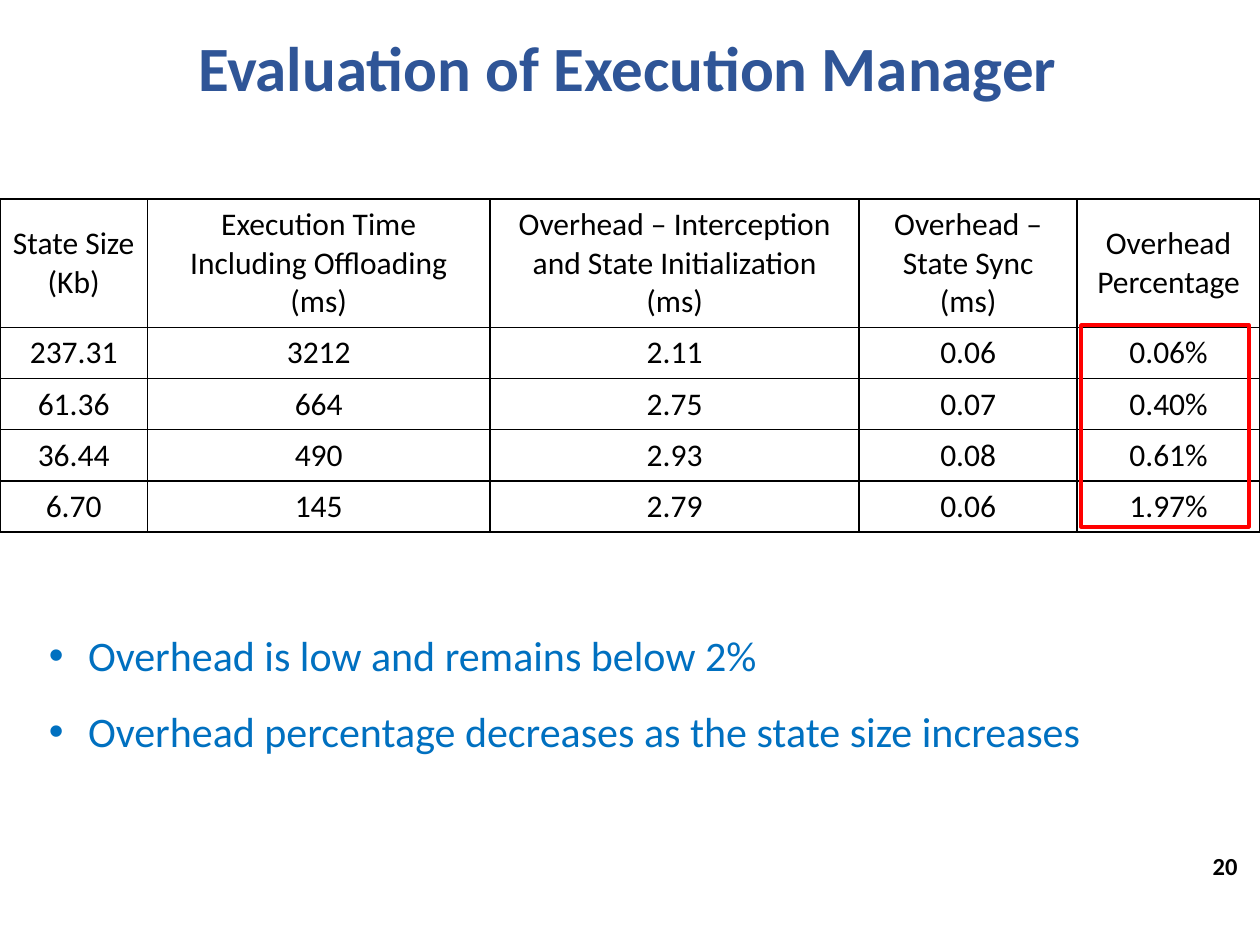
from dataclasses import dataclass

from lxml.etree import SubElement
from pptx import Presentation
from pptx.dml.color import RGBColor as Color
from pptx.enum.shapes import MSO_SHAPE as Shape
from pptx.enum.text import MSO_ANCHOR as Anchor, PP_ALIGN as Align
from pptx.oxml import parse_xml
from pptx.oxml.ns import nsdecls, qn
from pptx.util import Inches, Pt


@dataclass(frozen=True)
class Theme:
    font: str = "Calibri"
    ink: str = "000000"
    title: str = "2F5597"
    accent: str = "0070C0"
    marker: str = "FF0000"
    title_size: int = 36
    bullet_size: int = 24
    table_size: int = 18
    number_size: int = 14


COLUMN_WIDTHS = [1.17, 2.72, 2.93, 1.73, 1.45]
ROW_HEIGHTS = [1.02] + [0.4] * 4
RESULTS = [
    ["State Size (Kb)", "Execution Time Including Offloading (ms)",
     "Overhead – Interception and State Initialization (ms)",
     "Overhead – State Sync (ms)", "Overhead Percentage"],
    ["237.31", "3212", "2.11", "0.06", "0.06%"],
    ["61.36", "664", "2.75", "0.07", "0.40%"],
    ["36.44", "490", "2.93", "0.08", "0.61%"],
    ["6.70", "145", "2.79", "0.06", "1.97%"],
]
FINDINGS = [
    "Overhead is low and remains below 2%",
    "Overhead percentage decreases as the state size increases",
]


def set_values(target, values):
    for name, value in values.items():
        setattr(target, name, value)


class SlideBuilder:
    def __init__(self, page, theme):
        self.page = page
        self.theme = theme

    def fill_para(self, para, text, size, color, bold=False, **layout):
        set_values(para, layout)
        span = para.add_run()
        span.text = text
        set_values(span.font, {"name": self.theme.font, "size": Pt(size), "bold": bold})
        span.font.color.rgb = Color.from_string(color)

    def text(self, place, lines, size, color, bold=False, bullet=False,
             anchor=Anchor.MIDDLE, **layout):
        box = self.page.shapes.add_textbox(*map(Inches, place))
        frame = box.text_frame
        set_values(frame, {"word_wrap": True, "vertical_anchor": anchor})
        for index, line in enumerate(lines):
            para = frame.add_paragraph() if index else frame.paragraphs[0]
            if bullet:
                self.bullet(para)
            self.fill_para(para, line, size, color, bold, **layout)

    def bullet(self, para):
        properties = para._p.get_or_add_pPr()
        properties.set("marL", str(Inches(0.31)))
        properties.set("indent", str(-Inches(0.31)))
        SubElement(properties, qn("a:buFont"), typeface="Arial")
        SubElement(properties, qn("a:buChar"), char="•")

    def border(self, cell):
        """Draw a thin line on all four sides of the cell."""
        properties = cell._tc.get_or_add_tcPr()
        for index, side in enumerate("LRTB"):
            properties.insert(index, parse_xml(
                f'<a:ln{side} {nsdecls("a")} w="{Pt(1)}"><a:solidFill>'
                f'<a:srgbClr val="{self.theme.ink}"/></a:solidFill></a:ln{side}>'))

    def table(self, left, top, widths, heights, rows):
        size = map(Inches, (left, top, sum(widths), sum(heights)))
        table = self.page.shapes.add_table(len(rows), len(widths), *size).table
        set_values(table, {"first_row": False, "horz_banding": False})
        for column, width in zip(table.columns, widths):
            column.width = Inches(width)
        for row, height, values in zip(table.rows, heights, rows):
            row.height = Inches(height)
            for cell, value in zip(row.cells, values):
                cell.fill.background()
                cell.vertical_anchor = Anchor.MIDDLE
                self.border(cell)
                self.fill_para(cell.text_frame.paragraphs[0], value,
                               self.theme.table_size, self.theme.ink,
                               alignment=Align.CENTER)

    def outline(self, place, color, width):
        shape = self.page.shapes.add_shape(Shape.RECTANGLE, *map(Inches, place))
        shape.shadow.inherit = False
        shape.fill.background()
        shape.line.color.rgb = Color.from_string(color)
        shape.line.width = Pt(width)


def main():
    deck = Presentation()
    set_values(deck, {"slide_width": Inches(10), "slide_height": Inches(7.5)})
    theme = Theme()
    slide = SlideBuilder(deck.slides.add_slide(deck.slide_layouts[6]), theme)

    slide.table(0, 1.58, COLUMN_WIDTHS, ROW_HEIGHTS, RESULTS)
    slide.text((7.67, 6.67, 2.25, 0.4), ["20"], theme.number_size, theme.ink,
               bold=True, alignment=Align.RIGHT)
    slide.text((0.29, 4.75, 8.62, 1.25), FINDINGS, theme.bullet_size, theme.accent,
               bullet=True, anchor=Anchor.TOP, line_spacing=1.5)
    slide.text((0.67, 0.05, 8.62, 1.03), ["Evaluation of Execution Manager"],
               theme.title_size, theme.title, bold=True,
               alignment=Align.CENTER, line_spacing=0.9)
    slide.outline((8.58, 2.58, 1.33, 1.6), theme.marker, 2.25)

    deck.save("out.pptx")


if __name__ == "__main__":
    main()
